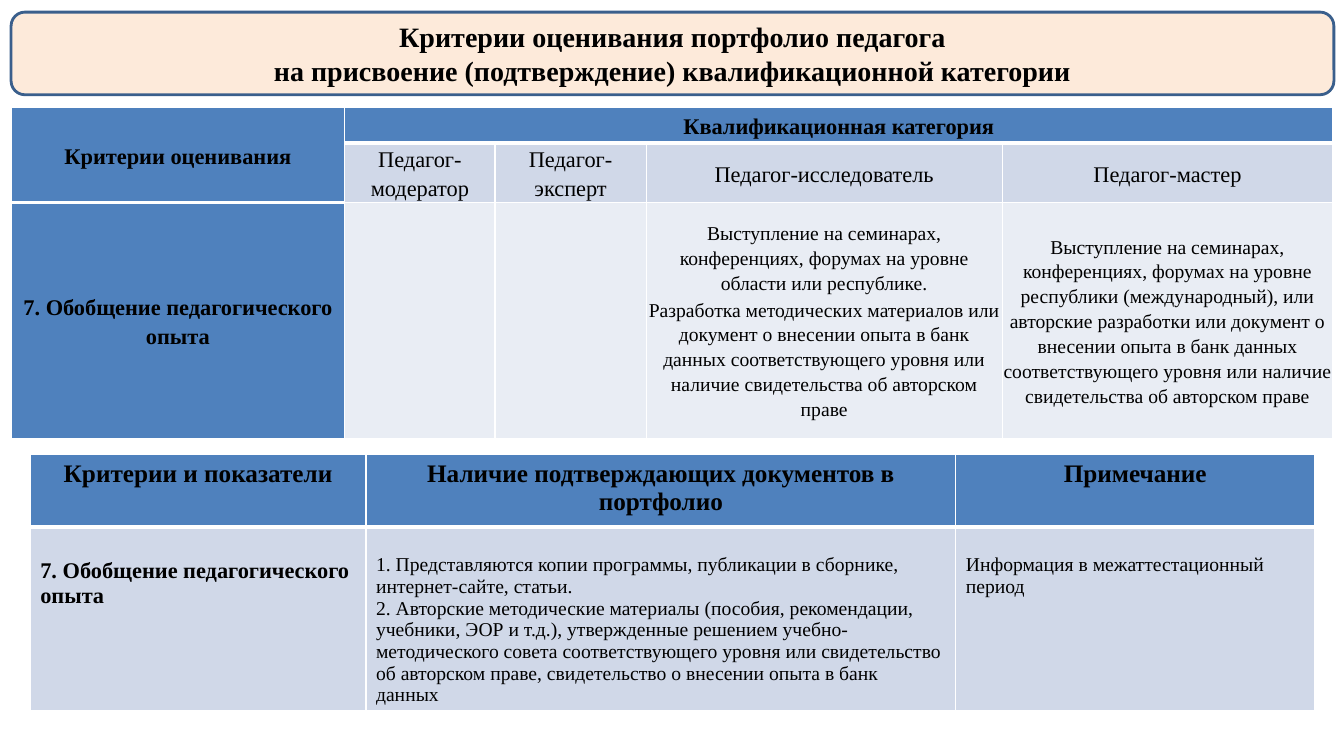
from dataclasses import dataclass, replace

from pptx import Presentation
from pptx.dml.color import RGBColor
from pptx.enum.shapes import MSO_SHAPE
from pptx.enum.text import MSO_ANCHOR, PP_ALIGN
from pptx.oxml import parse_xml
from pptx.oxml.ns import nsdecls
from pptx.util import Pt

EMU_PER_PX = 9144


@dataclass(frozen=True)
class Theme:
    """Colours, font and type sizes of the slide."""
    font: str = "Times New Roman"
    text: str = "000000"
    border: str = "FFFFFF"
    banner: str = "FDEADA"
    outline: str = "3A5F8C"
    header: str = "4F81BD"
    band: str = "D0D8E8"
    pale: str = "E9EDF4"
    title_size: int = 20
    heading_size: int = 18
    label_size: int = 16
    body_size: int = 14


@dataclass(frozen=True)
class CellStyle:
    """Look of one table cell, with margins in px."""
    fill: str
    size: int
    bold: bool = False
    align: PP_ALIGN = PP_ALIGN.CENTER
    anchor: MSO_ANCHOR = MSO_ANCHOR.MIDDLE
    line_spacing: float = 1.15
    space_after: int = 1
    side_margin: int = 1
    top_margin: int = 1
    bottom_margin: int = 1


THEME = Theme()

HEADER = CellStyle(THEME.header, THEME.label_size, bold=True)
CATEGORY = CellStyle(THEME.band, THEME.label_size)
REQUIREMENT = CellStyle(THEME.pale, THEME.body_size)
DOCUMENT_HEADER = CellStyle(
    THEME.header, THEME.heading_size, bold=True, anchor=MSO_ANCHOR.TOP,
    line_spacing=1, space_after=0, side_margin=10, top_margin=5, bottom_margin=5)
DOCUMENT_BODY = replace(
    DOCUMENT_HEADER, fill=THEME.band, size=THEME.body_size, bold=False,
    align=PP_ALIGN.LEFT, top_margin=27)
DOCUMENT_LABEL = replace(
    DOCUMENT_BODY, size=THEME.label_size, bold=True, top_margin=31)

CRITERION = "7. Обобщение педагогического опыта"

CATEGORY_ROWS = [
    [("Критерии оценивания", HEADER), ("Квалификационная категория", HEADER),
     ("", HEADER), ("", HEADER), ("", HEADER)],
    [("", HEADER), ("Педагог-модератор", CATEGORY), ("Педагог-эксперт", CATEGORY),
     ("Педагог-исследователь", CATEGORY), ("Педагог-мастер", CATEGORY)],
    [(CRITERION, HEADER), ("", REQUIREMENT), ("", REQUIREMENT),
     ("Выступление на семинарах, конференциях, форумах на уровне области или "
      "республике.\nРазработка методических материалов или документ о внесении "
      "опыта в банк данных соответствующего уровня или наличие свидетельства "
      "об авторском праве", REQUIREMENT),
     ("Выступление на семинарах, конференциях, форумах на уровне республики "
      "(международный), или авторские разработки или документ о внесении опыта "
      "в банк данных соответствующего уровня или наличие свидетельства "
      "об авторском праве", REQUIREMENT)],
]

DOCUMENT_ROWS = [
    [("Критерии и показатели", DOCUMENT_HEADER),
     ("Наличие подтверждающих документов в портфолио", DOCUMENT_HEADER),
     ("Примечание", DOCUMENT_HEADER)],
    [(CRITERION, DOCUMENT_LABEL),
     ("1. Представляются копии программы, публикации в сборнике, "
      "интернет-сайте, статьи.\n2. Авторские методические материалы (пособия, "
      "рекомендации, учебники, ЭОР и т.д.), утвержденные решением "
      "учебно-методического совета соответствующего уровня или свидетельство "
      "об авторском праве, свидетельство о внесении опыта в банк данных",
      DOCUMENT_BODY),
     ("Информация в межаттестационный период", DOCUMENT_BODY)],
]


def px(length):
    """Turn px into EMU."""
    return length * EMU_PER_PX


def color(value):
    """Turn a hex string into a colour."""
    return RGBColor.from_string(value)


def format_text(text_frame, size, bold, align, line_spacing=1, space_after=0):
    """Format every paragraph and run of a text frame."""
    for paragraph in text_frame.paragraphs:
        paragraph.alignment = align
        paragraph.line_spacing = line_spacing
        paragraph.space_after = Pt(space_after)
        for run in paragraph.runs:
            run.font.name = THEME.font
            run.font.size = Pt(size)
            run.font.bold = bold
            run.font.color.rgb = color(THEME.text)


def add_banner(slide, left, top, width, height, text):
    """Add the rounded title banner."""
    banner = slide.shapes.add_shape(
        MSO_SHAPE.ROUNDED_RECTANGLE, px(left), px(top), px(width), px(height))
    banner.shadow.inherit = False
    banner.fill.solid()
    banner.fill.fore_color.rgb = color(THEME.banner)
    banner.line.color.rgb = color(THEME.outline)
    banner.line.width = Pt(2)
    banner.text_frame.text = text
    banner.text_frame.word_wrap = True
    banner.text_frame.vertical_anchor = MSO_ANCHOR.MIDDLE
    format_text(banner.text_frame, THEME.title_size, True, PP_ALIGN.CENTER)


def set_borders(cell, bottom_width):
    """Draw the four cell borders, the lower one with its own width in points."""
    properties = cell._tc.get_or_add_tcPr()
    for side, width in (("L", 1), ("R", 1), ("T", 1), ("B", bottom_width)):
        properties.append(parse_xml(
            f'<a:ln{side} {nsdecls("a")} w="{Pt(width)}"><a:solidFill>'
            f'<a:srgbClr val="{THEME.border}"/></a:solidFill></a:ln{side}>'))


def fill_cell(cell, text, style, bottom_width):
    """Write and style one cell."""
    set_borders(cell, bottom_width)
    cell.fill.solid()
    cell.fill.fore_color.rgb = color(style.fill)
    cell.vertical_anchor = style.anchor
    cell.margin_left = cell.margin_right = px(style.side_margin)
    cell.margin_top = px(style.top_margin)
    cell.margin_bottom = px(style.bottom_margin)
    cell.text_frame.text = text
    format_text(cell.text_frame, style.size, style.bold, style.align,
                style.line_spacing, style.space_after)


def add_grid(slide, left, top, widths, heights, rows):
    """Add a table of (text, style) rows and return it."""
    table = slide.shapes.add_table(
        len(heights), len(widths), px(left), px(top),
        px(sum(widths)), px(sum(heights))).table
    table.first_row = table.horz_banding = False
    for column, width in zip(table.columns, widths):
        column.width = px(width)
    for row, height in zip(table.rows, heights):
        row.height = px(height)
    for row_index, row in enumerate(rows):
        for column_index, (text, style) in enumerate(row):
            fill_cell(table.cell(row_index, column_index), text, style,
                      3 if row_index == 0 else 1)
    return table


def main():
    """Build the slide and save it."""
    presentation = Presentation()
    presentation.slide_width = px(1333)
    presentation.slide_height = px(750)
    slide = presentation.slides.add_slide(presentation.slide_layouts[6])
    add_banner(slide, 11, 12, 1312, 82,
               "Критерии оценивания портфолио педагога\n"
               "на присвоение (подтверждение) квалификационной категории")
    categories = add_grid(slide, 11, 107, [331, 149, 150, 353, 328],
                          [35, 59, 234], CATEGORY_ROWS)
    categories.cell(0, 0).merge(categories.cell(1, 0))
    categories.cell(0, 1).merge(categories.cell(0, 4))
    add_grid(slide, 30, 451, [333, 585, 356], [72, 179], DOCUMENT_ROWS)
    presentation.save("out.pptx")


if __name__ == "__main__":
    main()
